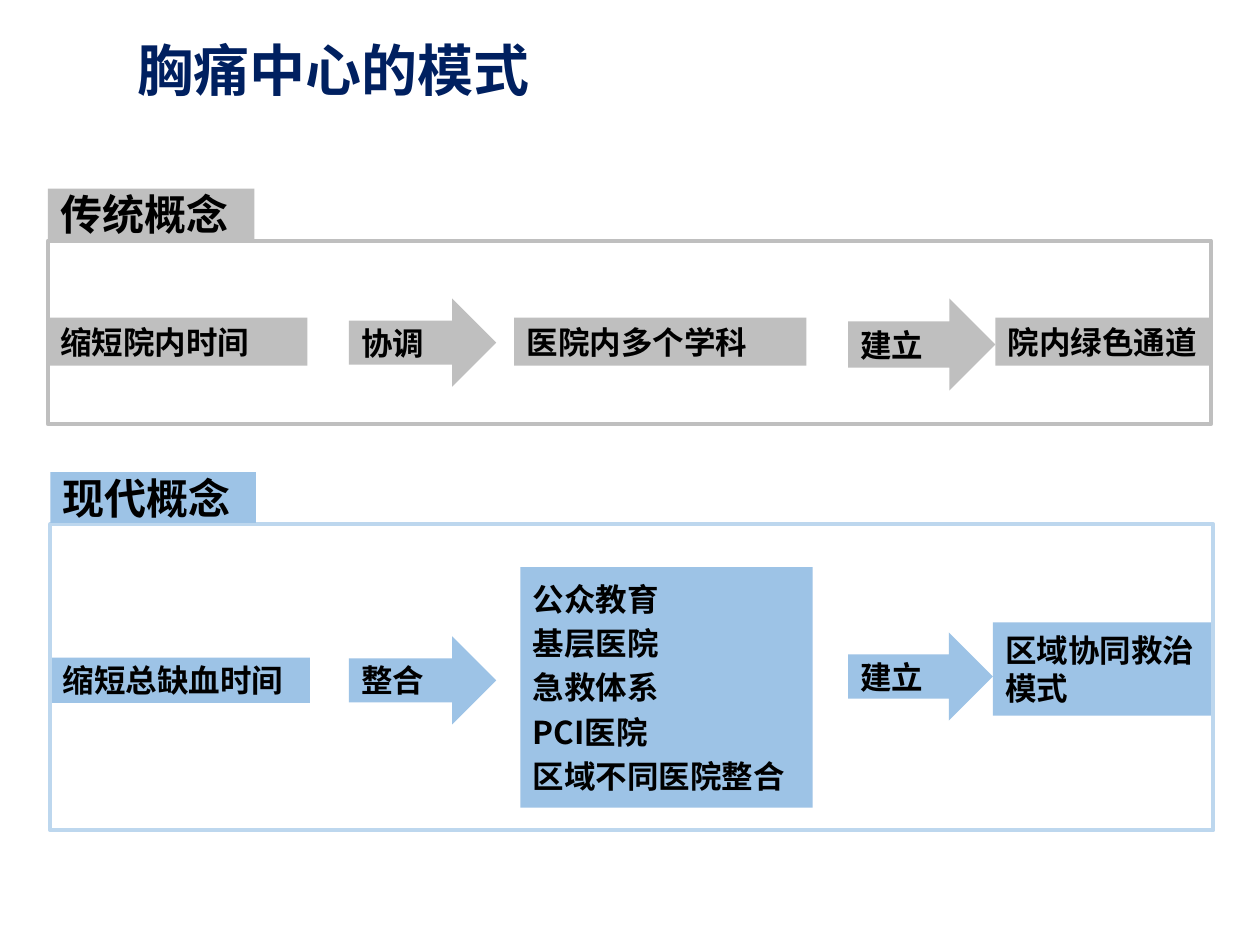
from pptx import Presentation
from pptx.dml.color import RGBColor
from pptx.enum.shapes import MSO_SHAPE
from pptx.enum.text import MSO_ANCHOR, PP_ALIGN
from pptx.util import Pt

RECTANGLE = MSO_SHAPE.RECTANGLE
ARROW = MSO_SHAPE.RIGHT_ARROW
MIDDLE = MSO_ANCHOR.MIDDLE
LEFT = PP_ALIGN.LEFT

FONT = "Noto Sans CJK SC"
BLACK, NAVY = "000000", "002060"
GREY, BLUE, PALE_BLUE = "BFBFBF", "9DC3E6", "BDD7EE"
TAB_HEIGHT = 29

# Steps: shape, lines, then left, top, width and height within the panel
TRADITIONAL_STEPS = [
    (RECTANGLE, ["缩短院内时间"], (0, 44, 148.3, 27.4)),
    (RECTANGLE, ["医院内多个学科"], (266.4, 44, 167, 27.4)),
    (ARROW, ["协调"], (172, 33.1, 84.2, 50.4)),
    (ARROW, ["建立"], (457.2, 33.1, 84.2, 52.6)),
    (RECTANGLE, ["院内绿色通道"], (541.4, 44, 123.2, 27.4)),
]
MODERN_STEPS = [
    (RECTANGLE, ["缩短总缺血时间"], (0, 76.3, 148.3, 25.9)),
    (RECTANGLE,
     ["公众教育", "基层医院", "急救体系", "PCI医院", "区域不同医院整合"],
     (268.6, 24.5, 167, 137.5)),
    (ARROW, ["整合"], (170.6, 64.1, 84.2, 50.4)),
    (ARROW, ["建立"], (455.8, 61.9, 82.8, 50.4)),
    (RECTANGLE, ["区域协同救治模式"], (538.6, 56.2, 126, 53.3)),
]


def color(hex_string):
    return RGBColor.from_string(hex_string)


def write_lines(shape, lines, size, font_color):
    frame = shape.text_frame
    frame.word_wrap = True
    frame.vertical_anchor = MIDDLE
    frame.margin_right = 0
    for index, line in enumerate(lines):
        paragraph = frame.add_paragraph() if index else frame.paragraphs[0]
        paragraph.text = line
        paragraph.alignment = LEFT
        if index:
            paragraph.space_before = Pt(size * 0.2)
        paragraph.font.name = FONT
        paragraph.font.size = Pt(size)
        paragraph.font.bold = True
        paragraph.font.color.rgb = color(font_color)


def add_block(slide, kind, box, fill, lines, size=18):
    shape = slide.shapes.add_shape(kind, *map(Pt, box))
    shape.shadow.inherit = False
    shape.fill.solid()
    shape.fill.fore_color.rgb = color(fill)
    shape.line.fill.background()
    write_lines(shape, lines, size, BLACK)


def add_frame(slide, box, line_color):
    shape = slide.shapes.add_shape(RECTANGLE, *map(Pt, box))
    shape.shadow.inherit = False
    shape.fill.background()
    shape.line.color.rgb = color(line_color)
    shape.line.width = Pt(2.25)


def add_title(slide, box, text):
    write_lines(slide.shapes.add_textbox(*map(Pt, box)), [text], 32, NAVY)


def add_concept_panel(slide, box, heading, tab_width, steps, fill, line_color):
    """Place a framed row of steps with a heading tab on its top left corner."""
    left, top, _, _ = box
    for kind, lines, (x, y, width, height) in steps:
        add_block(slide, kind, (left + x, top + y, width, height), fill, lines)
    add_frame(slide, box, line_color)
    tab = (left, top - TAB_HEIGHT - 0.75, tab_width, TAB_HEIGHT)
    add_block(slide, RECTANGLE, tab, fill, [heading], 24)


def main():
    presentation = Presentation()
    presentation.slide_width = Pt(720)
    presentation.slide_height = Pt(540)
    slide = presentation.slides.add_slide(presentation.slide_layouts[6])
    add_title(slide, (71.3, -0.7, 316, 80), "胸痛中心的模式")
    add_concept_panel(slide, (27.4, 137.5, 664.6, 105), "传统概念", 118,
                      TRADITIONAL_STEPS, GREY, GREY)
    add_concept_panel(slide, (28.8, 299.5, 664.6, 175), "现代概念", 117.4,
                      MODERN_STEPS, BLUE, PALE_BLUE)
    presentation.save("out.pptx")


if __name__ == "__main__":
    main()
